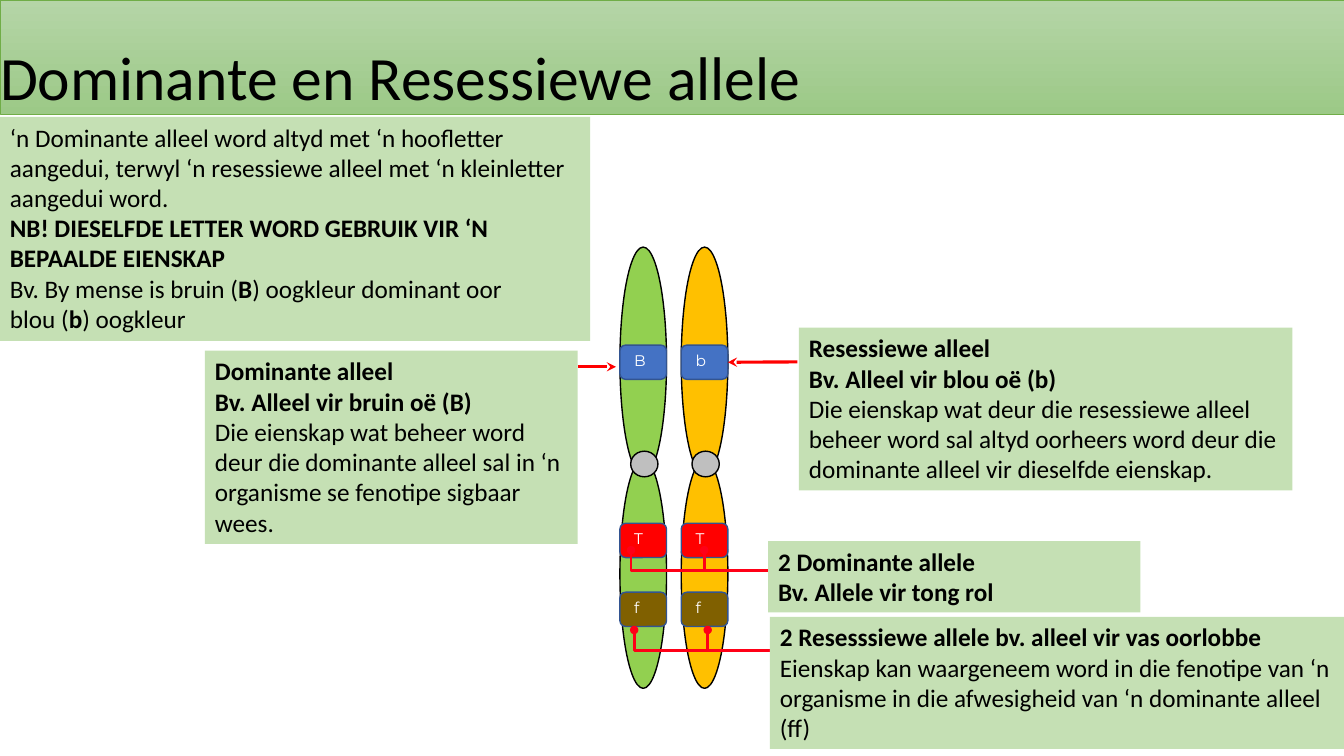
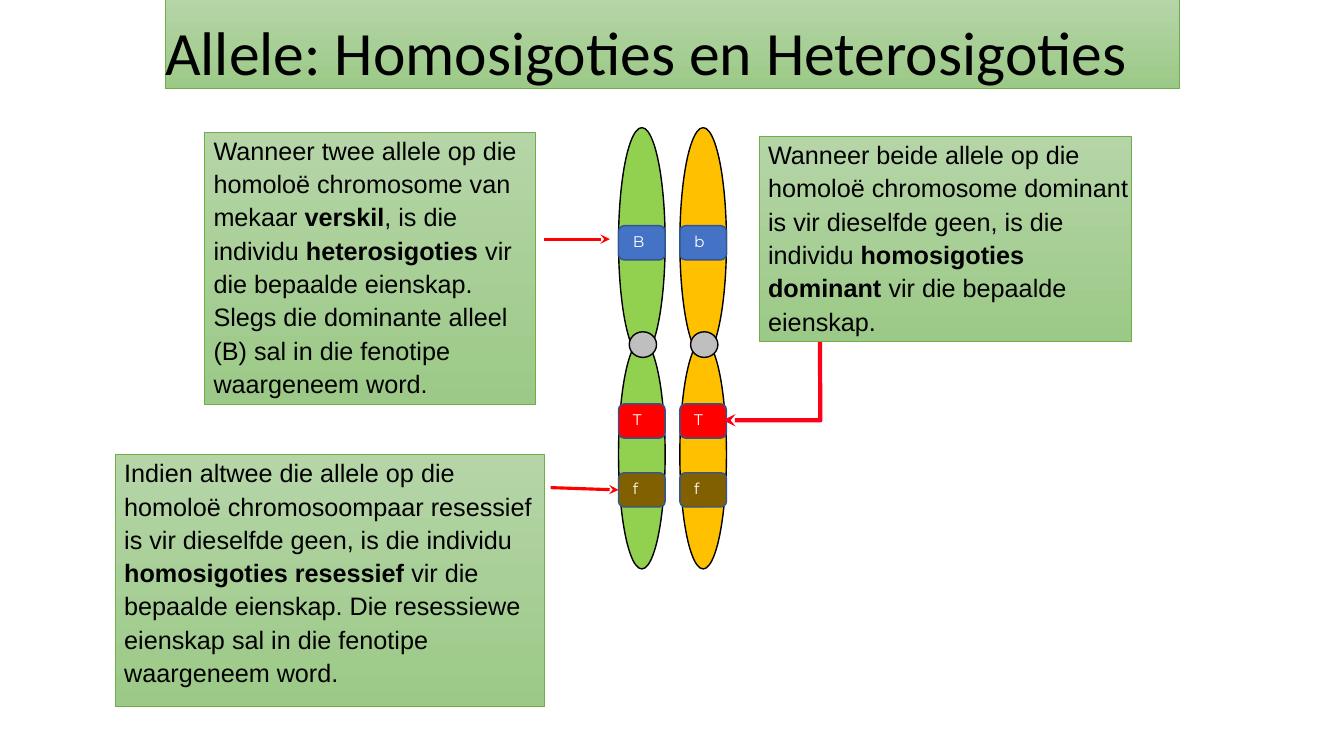
from lxml.etree import SubElement
from pptx import Presentation
from pptx.dml.color import RGBColor
from pptx.enum.shapes import MSO_CONNECTOR, MSO_SHAPE
from pptx.enum.text import MSO_ANCHOR, MSO_AUTO_SIZE, PP_ALIGN
from pptx.oxml.ns import qn
from pptx.util import Pt

COLORS = {
    "black": "000000", "white": "FFFFFF", "pale": "C5E0B4",
    "grad_top": "B5D5A7", "grad_end": "9CC987", "border": "70AD47",
    "green": "92D050", "amber": "FFC000", "grey": "BFBFBF",
    "blue": "4472C4", "red": "FF0000", "brown": "806000",
    "gene_line": "325491", "trace": "FF0017",
}
TITLE = dict(size=44, font="Calibri", spacing=0.9, insets=(0, 0, 0, 0))
NOTE = dict(size=18, font="Calibri", spacing=1.0, insets=(7.2, 3.6, 7.2, 3.6))
PANEL = dict(size=18, font="Arial", spacing=1.1, insets=(6.5, 0, 0, 0))
GENE = dict(size=11, font="Montserrat", spacing=1.07, insets=(9, 2.4, 0, 0),
            color="white", wrap=False)

CHROMOSOMES = [("green", "BTf"), ("amber", "bTf")]
GENE_ROWS = [("blue", 70), ("red", 197.3), ("brown", 246.5)]
CHROMOSOME_GAP = 43.8

SLIDES = [
    {
        "title": ("Dominante en Resessiewe allele", (0, 0, 960, 81.5)),
        "origin": (442.8, 176.5),
        "style": NOTE,
        "arrows": [((412.6, 262), (440, 262)), ((569.5, 258.5), (1, 0, 3))],
        "traces": [
            dict(points=[(450.7, 393), (450.7, 407.5), (550, 407.5), (503, 407.5), (503, 393)],
                 width=2, head="oval", tail="oval"),
            dict(points=[(453, 450), (453, 464.4), (552, 464.4), (505.5, 464.4), (505.5, 450)],
                 width=2, head="oval", tail="oval"),
        ],
        "boxes": [
            ((0, 83.5, 421.5, 160), [
                "‘n Dominante alleel word altyd met ‘n hoofletter aangedui, terwyl ‘n resessiewe alleel met ‘n kleinletter aangedui word.",
                "*NB! DIESELFDE LETTER WORD GEBRUIK VIR ‘N BEPAALDE EIENSKAP*",
                "Bv. By mense is bruin (*B*) oogkleur dominant oor",
                "blou (*b*) oogkleur"]),
            ((146.4, 250.5, 266.2, 138), [
                "*Dominante alleel*",
                "*Bv. Alleel vir bruin oë (B)*",
                "Die eienskap wat beheer word deur die dominante alleel sal in ‘n organisme se fenotipe sigbaar wees."]),
            ((570.7, 234, 352.5, 116.3), [
                "*Resessiewe alleel*",
                "*Bv. Alleel vir blou oë (b)*",
                "Die eienskap wat deur die resessiewe alleel beheer word sal altyd oorheers word deur die dominante alleel vir dieselfde eienskap."]),
            ((548.7, 386.5, 265.8, 51), [
                "*2 Dominante allele*",
                "*Bv. Allele vir tong rol*"]),
            ((550, 440.6, 410, 94.4), [
                "*2 Resesssiewe allele bv. alleel vir vas oorlobbe*",
                "Eienskap kan waargeneem word in die fenotipe van ‘n organisme in die afwesigheid van ‘n dominante alleel (ff)"]),
        ],
    },
    {
        "title": ("Allele: Homosigoties en Heterosigoties", (118, -0.5, 724.5, 64)),
        "origin": (441.8, 91.2),
        "style": PANEL,
        "arrows": [((388.7, 170.8), (435.6, 170.8)), ((393.3, 348.3), (0, 2, 1))],
        "traces": [
            dict(points=[(585.6, 227), (586, 300.2), (516.5, 300.2)],
                 width=3, head=None, tail="stealth"),
        ],
        "boxes": [
            ((542.2, 97.5, 266, 146), [
                "Wanneer beide allele op die homoloë chromosome dominant is vir dieselfde geen, is die individu *homosigoties dominant *vir die bepaalde eienskap."]),
            ((146, 94.5, 236.5, 194.5), [
                "Wanneer twee allele op die homoloë chromosome van mekaar *verskil*, is die individu *heterosigoties *vir die bepaalde eienskap. Slegs die dominante alleel (B) sal in die fenotipe waargeneem word."]),
            ((82.2, 324.7, 306.8, 180), [
                "Indien altwee die allele op die homoloë chromosoompaar resessief is vir dieselfde geen, is die individu *homosigoties resessief *vir die bepaalde eienskap. Die resessiewe eienskap sal in die fenotipe waargeneem word."]),
        ],
    },
]


def rgb(name):
    return RGBColor.from_string(COLORS[name])


def set_line(sp, color, width, head=None, tail=None):
    sp.line.color.rgb = rgb(color)
    sp.line.width = Pt(width)
    ln = sp.element.spPr.find(qn("a:ln"))
    for tag, end in (("a:headEnd", head), ("a:tailEnd", tail)):
        if end:
            SubElement(ln, qn(tag)).set("type", end)


def set_gradient(sp):
    sp.fill.gradient()
    sp.fill.gradient_angle = 270
    for stop, name in zip(sp.fill.gradient_stops, ("grad_top", "grad_end")):
        stop.color.rgb = rgb(name)
    set_line(sp, "border", 0.5)


def write(sp, paragraphs, style, anchor=MSO_ANCHOR.TOP):
    tf = sp.text_frame
    left, top, right, bottom = map(Pt, style["insets"])
    frame = dict(margin_left=left, margin_top=top, margin_right=right, margin_bottom=bottom,
                 word_wrap=style.get("wrap", True), auto_size=MSO_AUTO_SIZE.NONE,
                 vertical_anchor=anchor)
    for name, value in frame.items():
        setattr(tf, name, value)
    for i, text in enumerate(paragraphs):
        p = tf.add_paragraph() if i else tf.paragraphs[0]
        p.alignment = PP_ALIGN.LEFT
        p.line_spacing = style["spacing"]
        for j, part in enumerate(text.split("*")):
            if part:
                r = p.add_run()
                r.text = part
                font = dict(size=Pt(style["size"]), name=style["font"], bold=j % 2 == 1)
                for name, value in font.items():
                    setattr(r.font, name, value)
                r.font.color.rgb = rgb(style.get("color", "black"))


def add_title(s, text, box):
    sp = s.shapes.title
    for name, value in zip(("left", "top", "width", "height"), box):
        setattr(sp, name, Pt(value))
    set_gradient(sp)
    write(sp, [text], TITLE, MSO_ANCHOR.BOTTOM)


def add_solid(s, kind, box, fill, line=None):
    sp = s.shapes.add_shape(kind, *map(Pt, box))
    sp.shadow.inherit = False
    sp.fill.solid()
    sp.fill.fore_color.rgb = rgb(fill)
    if line:
        set_line(sp, line, 1)
    else:
        sp.line.fill.background()
    return sp


def add_chromosomes(s, left, top):
    genes = {}
    for col, (color, letters) in enumerate(CHROMOSOMES):
        x = left + col * CHROMOSOME_GAP
        for dy in (0, 151.7):
            add_solid(s, MSO_SHAPE.OVAL, (x, top + dy, 33.3, 163.5), color, "black")
        add_solid(s, MSO_SHAPE.OVAL, (x + 7.7, top + 145.8, 19.5, 18.3), "grey", "black")
        for row, (letter, (fill, dy)) in enumerate(zip(letters, GENE_ROWS)):
            sp = add_solid(s, MSO_SHAPE.ROUNDED_RECTANGLE, (x, top + dy, 33.3, 24.5),
                           fill, "gene_line")
            write(sp, [letter], GENE)
            genes[col, row] = sp
    return genes


def add_arrow(s, start, end, genes):
    joined = len(end) == 3
    tip = start if joined else end
    sp = s.shapes.add_connector(MSO_CONNECTOR.STRAIGHT, *map(Pt, start + tip))
    if joined:
        col, row, side = end
        sp.end_connect(genes[col, row], side)
    set_line(sp, "red", 2.25, tail="stealth")
    SubElement(sp.element.spPr, qn("a:effectLst"))


def add_trace(s, points, width, head, tail):
    first, *rest = [tuple(map(Pt, point)) for point in points]
    builder = s.shapes.build_freeform(*first)
    builder.add_line_segments(rest, close=False)
    sp = builder.convert_to_shape()
    sp.shadow.inherit = False
    sp.fill.background()
    set_line(sp, "trace", width, head, tail)


def add_box(s, box, paragraphs, style):
    sp = add_solid(s, MSO_SHAPE.RECTANGLE, box, "pale")
    if style is PANEL:
        set_gradient(sp)
    write(sp, paragraphs, style)


def main():
    prs = Presentation()
    prs.slide_width, prs.slide_height = Pt(960), Pt(540)
    for data in SLIDES:
        s = prs.slides.add_slide(prs.slide_layouts[5])
        add_title(s, *data["title"])
        genes = add_chromosomes(s, *data["origin"])
        for start, end in data["arrows"]:
            add_arrow(s, start, end, genes)
        for trace in data["traces"]:
            add_trace(s, **trace)
        for box, paragraphs in data["boxes"]:
            add_box(s, box, paragraphs, data["style"])
    prs.save("out.pptx")


if __name__ == "__main__":
    main()
